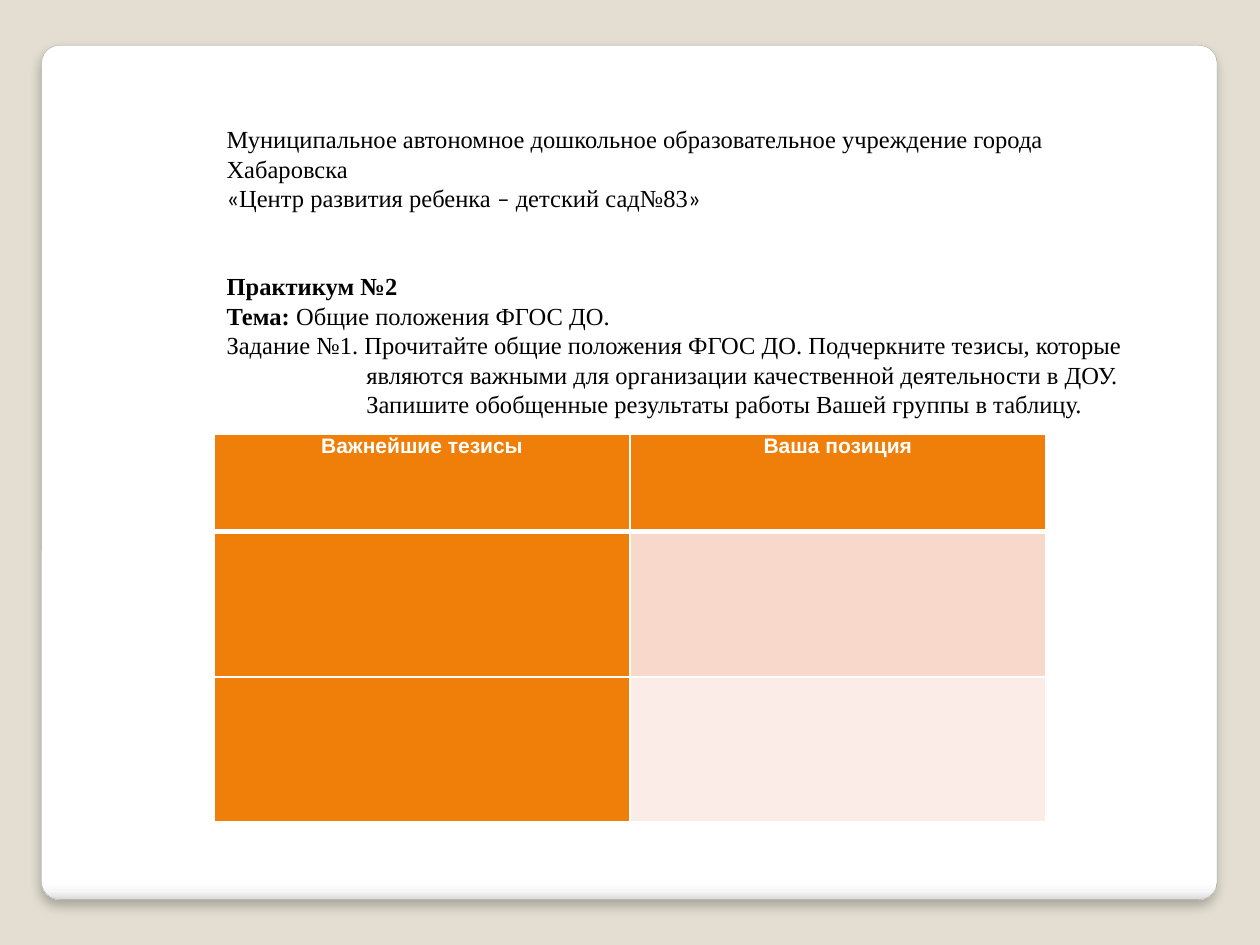
from pptx import Presentation
from pptx import util as u
from pptx.dml import color
from pptx.enum import shapes, text
from pptx.oxml import parse_xml
from pptx.oxml.ns import nsdecls, qn

WIDTH, HEIGHT = 10, 7.5
SERIF = "Times New Roman"
CARD_STOPS = [(0, "FFFFFF"), (98, "FFFFFF"), (99, "F7F7F7"), (100, "DADADA")]
HEADINGS = ["Важнейшие тезисы", "Ваша позиция"]
ROW_FILLS = [("F07F09", "F07F09"), ("F07F09", "F9D8CC"), ("F07F09", "FCECE7")]
ROW_HEIGHTS = [0.76, 1.14, 1.14]
LINE = 16.8
BLANK_LINES = {"space_before": u.Pt(2 * LINE)}
PARAGRAPHS = [
    ([("Муниципальное автономное дошкольное образовательное учреждение города Хабаровска", {})], {}, 0),
    ([("«", {"name": "Calibri"}), ("Центр развития ребенка ", {}), ("–", {"name": "Calibri"}),
      (" детский сад№83", {}), ("»", {"name": "Calibri"})], {}, 0),
    ([("Практикум №2", {"bold": True})], BLANK_LINES, 0),
    ([("Тема: ", {"bold": True}), ("Общие положения ФГОС ДО.", {})], {}, 0),
    ([("Задание №1. Прочитайте общие положения ФГОС ДО. Подчеркните тезисы, которые", {})], {}, 0),
    ([("являются важными для организации качественной деятельности в ДОУ.", {})], {}, 1.11),
    ([("Запишите обобщенные результаты работы Вашей группы в таблицу.", {})], {}, 1.11),
]


def paint(target, value):
    target.rgb = color.RGBColor.from_string(value)


def fill_solid(fill, value):
    fill.solid()
    paint(fill.fore_color, value)


def apply(target, values):
    for name, value in values.items():
        setattr(target, name, value)


def add_span(para, words, values, shade):
    span = para.add_run()
    span.text = words
    apply(span.font, values)
    paint(span.font.color, shade)


def add_card(page, left, top, width, height):
    card = page.shapes.add_shape(shapes.MSO_SHAPE.ROUNDED_RECTANGLE, left, top, width, height)
    card.adjustments[0] = 0.021
    card.shadow.inherit = False
    card.fill.gradient()
    card.fill.gradient_angle = 270
    paint(card.line.color, "A4A4A4")
    card.line.width = u.Pt(0.16)
    properties = card.element.spPr
    stops = "".join(f'<a:gs pos="{share * 1000}"><a:srgbClr val="{shade}"/></a:gs>'
                    for share, shade in CARD_STOPS)
    gradient = properties.find(qn("a:gradFill"))
    gradient.replace(gradient.find(qn("a:gsLst")),
                     parse_xml(f'<a:gsLst {nsdecls("a")}>{stops}</a:gsLst>'))
    properties.find(qn("a:effectLst")).append(parse_xml(
        f'<a:outerShdw {nsdecls("a")} blurRad="{u.Pt(6)}" dist="{u.Pt(4)}" dir="5400000" '
        'rotWithShape="0"><a:srgbClr val="000000"><a:alpha val="25000"/></a:srgbClr></a:outerShdw>'))


def add_borders(cell, row):
    weights = {"L": 1, "R": 1, "T": 3 if row == 1 else 1, "B": 3 if row == 0 else 1}
    properties = cell._tc.get_or_add_tcPr()
    for place, (side, weight) in enumerate(weights.items()):
        properties.insert(place, parse_xml(
            f'<a:ln{side} {nsdecls("a")} w="{u.Pt(weight)}"><a:solidFill>'
            f'<a:srgbClr val="FFFFFF"/></a:solidFill></a:ln{side}>'))


def add_answer_table(page, left, top, width, height):
    table = page.shapes.add_table(len(ROW_FILLS), len(HEADINGS), left, top, width, height).table
    for row, fills in enumerate(ROW_FILLS):
        table.rows[row].height = int(height * ROW_HEIGHTS[row] / sum(ROW_HEIGHTS))
        for column, shade in enumerate(fills):
            cell = table.cell(row, column)
            apply(cell, {"margin_left": u.Inches(0.07), "margin_right": u.Inches(0.07),
                         "margin_top": 0, "margin_bottom": 0})
            fill_solid(cell.fill, shade)
            add_borders(cell, row)
    for column, heading in enumerate(HEADINGS):
        para = table.cell(0, column).text_frame.paragraphs[0]
        para.alignment = text.PP_ALIGN.CENTER
        add_span(para, heading, {"name": "Arial", "size": u.Pt(12), "bold": True}, "FFFFFF")


def add_assignment(page, left, top, width, height):
    frame = page.shapes.add_textbox(left, top, width, height).text_frame
    apply(frame, {"word_wrap": True, "vertical_anchor": text.MSO_ANCHOR.TOP})
    for index, (spans, spacing, indent) in enumerate(PARAGRAPHS):
        para = frame.add_paragraph() if index else frame.paragraphs[0]
        apply(para, {"line_spacing": u.Pt(LINE), **spacing})
        if indent:
            para._p.get_or_add_pPr().set("marL", str(u.Inches(indent)))
        for words, values in spans:
            add_span(para, words, {"name": SERIF, "size": u.Pt(14), **values}, "000000")


def share(left, top, width, height):
    return [u.Inches(part * side) for part, side in
            zip((left, top, width, height), (WIDTH, HEIGHT, WIDTH, HEIGHT))]


def main():
    deck = Presentation()
    apply(deck, {"slide_width": u.Inches(WIDTH), "slide_height": u.Inches(HEIGHT)})
    page = deck.slides.add_slide(deck.slide_layouts[6])
    fill_solid(page.background.fill, "E3DED1")
    add_card(page, *share(0.033, 0.048, 0.933, 0.904))
    add_answer_table(page, *share(0.17, 0.46, 0.66, 0.41))
    add_assignment(page, *share(0.17, 0.125, 0.75, 0.37))
    deck.save("out.pptx")


if __name__ == "__main__":
    main()
